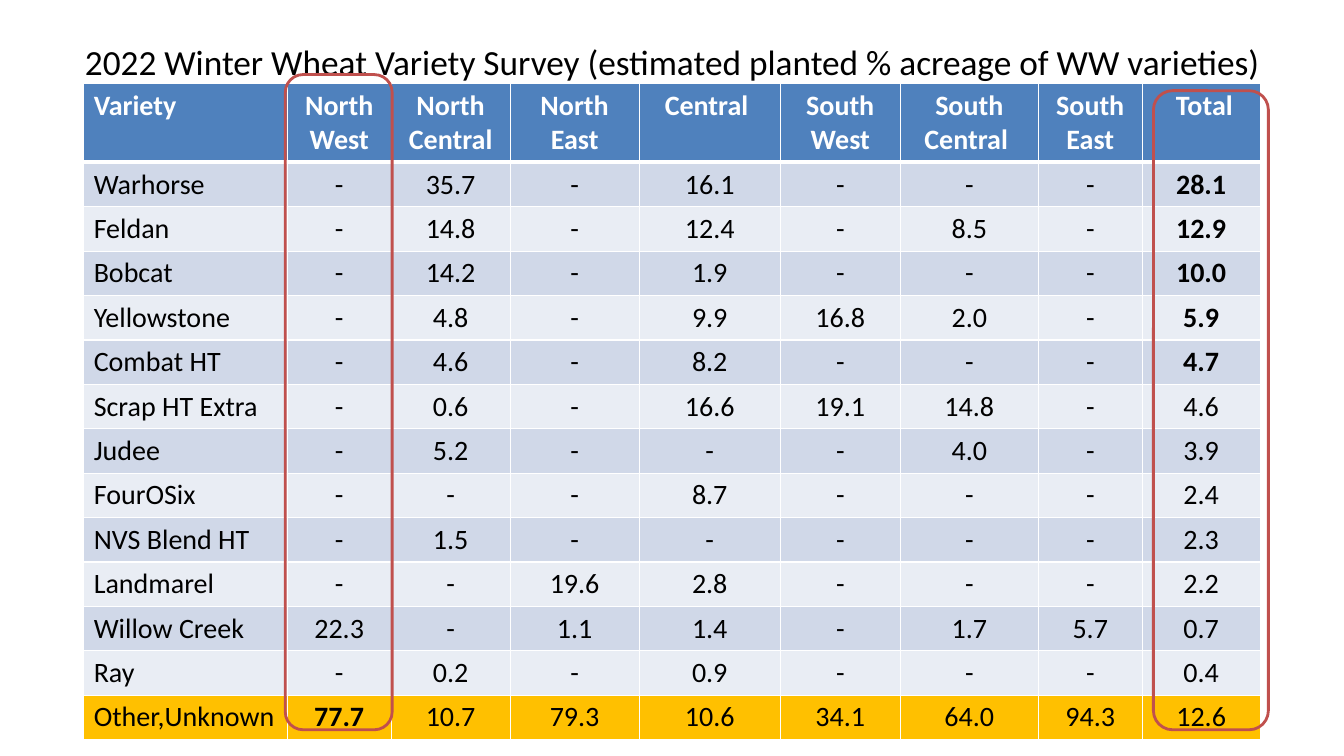
from dataclasses import dataclass

from lxml.etree import SubElement as Sub
from pptx import Presentation
from pptx.dml.color import RGBColor as RGB
from pptx.enum.shapes import MSO_SHAPE as Shape
from pptx.enum.text import MSO_ANCHOR as Anchor, MSO_AUTO_SIZE as Fit, PP_ALIGN as Align
from pptx.oxml.ns import qn
from pptx.util import Inches, Pt


@dataclass(frozen=True)
class Theme:
    font: str = "Calibri"
    title: float = 25.2
    cell: float = 20
    black: str = "000000"
    white: str = "FFFFFF"
    head: str = "4F81BD"
    odd: str = "D0D8E8"
    even: str = "E9EDF4"
    other: str = "FFC000"
    frame: str = "C0504D"


THEME = Theme()
TITLE = "2022 Winter Wheat Variety Survey (estimated planted % acreage of WW varieties)"
WIDTHS = [2.02, 1.03, 1.18, 1.28, 1.4, 1.19, 1.37, 1.03, 1.17]
HEAD_H, ROW_H = 0.65, 0.44
ROWS = [
    ["Variety", "North West", "North Central", "North East", "Central ",
     "South West", "South Central ", "South East", " Total"],
    ["Warhorse", "-", "35.7", "-", "16.1", "-", "-", "-", "28.1"],
    ["Feldan", "-", "14.8", "-", "12.4", "-", "8.5", "-", "12.9"],
    ["Bobcat", "-", "14.2", "-", "1.9", "-", "-", "-", "10.0"],
    ["Yellowstone", "-", "4.8", "-", "9.9", "16.8", "2.0", "-", "5.9"],
    ["Combat HT", "-", "4.6", "-", "8.2", "-", "-", "-", "4.7"],
    ["Scrap HT Extra", "-", "0.6", "-", "16.6", "19.1", "14.8", "-", "4.6"],
    ["Judee", "-", "5.2", "-", "-", "-", "4.0", "-", "3.9"],
    ["FourOSix", "-", "-", "-", "8.7", "-", "-", "-", "2.4"],
    ["NVS Blend HT", "-", "1.5", "-", "-", "-", "-", "-", "2.3"],
    ["Landmarel", "-", "-", "19.6", "2.8", "-", "-", "-", "2.2"],
    ["Willow Creek", "22.3", "-", "1.1", "1.4", "-", "1.7", "5.7", "0.7"],
    ["Ray", "-", "0.2", "-", "0.9", "-", "-", "-", "0.4"],
    ["Other,Unknown", "77.7", "10.7", "79.3", "10.6", "34.1", "64.0", "94.3", "12.6"],
]
LAST_ROW, LAST_COL = len(ROWS) - 1, len(WIDTHS) - 1
# The five leading totals and the largest unknown share
BOLD = {(row, LAST_COL) for row in range(1, 6)} | {(LAST_ROW, 1)}


def style(para, size, color, bold, align):
    para.alignment = align
    for run in para.runs:
        font = run.font
        font.name, font.size, font.bold = THEME.font, Pt(size), bold
        font.color.rgb = RGB.from_string(color)


def add_title(slide):
    title = slide.shapes.title
    title.left, title.top = Inches(0.67), Inches(0.23)
    title.width, title.height = Inches(12), Inches(0.75)
    frame = title.text_frame
    frame.text = TITLE
    frame.auto_size, frame.vertical_anchor = Fit.NONE, Anchor.MIDDLE
    style(frame.paragraphs[0], THEME.title, THEME.black, False, Align.CENTER)


def row_fill(row):
    if row == 0:
        return THEME.head
    if row == LAST_ROW:
        return THEME.other
    return THEME.odd if row % 2 else THEME.even


def set_edges(cell, **edges):
    # Borders come before the fill in the cell properties
    props = cell._tc.get_or_add_tcPr()
    for spot, (side, width) in enumerate(edges.items()):
        line = Sub(props, qn(f"a:ln{side}"), w=str(Pt(width)))
        Sub(Sub(line, qn("a:solidFill")), qn("a:srgbClr"), val=THEME.white)
        props.insert(spot, line)


def add_survey(slide):
    height = HEAD_H + ROW_H * LAST_ROW
    table = slide.shapes.add_table(
        len(ROWS), len(WIDTHS), Inches(0.83), Inches(0.83),
        Inches(sum(WIDTHS)), Inches(height)).table
    for column, width in zip(table.columns, WIDTHS):
        column.width = Inches(width)
    for row, values in enumerate(ROWS):
        table.rows[row].height = Inches(ROW_H if row else HEAD_H)
        for col, value in enumerate(values):
            cell = table.cell(row, col)
            cell.text_frame.text = value
            cell.fill.solid()
            cell.fill.fore_color.rgb = RGB.from_string(row_fill(row))
            set_edges(cell, L=1, R=1, T=3 if row == 1 else 1, B=1 if row else 3)
            style(cell.text_frame.paragraphs[0], THEME.cell,
                  THEME.black if row else THEME.white,
                  row == 0 or (row, col) in BOLD,
                  Align.CENTER if col else Align.LEFT)


def add_frame(slide, left, top, width, height):
    box = slide.shapes.add_shape(Shape.ROUNDED_RECTANGLE, Inches(left),
                                 Inches(top), Inches(width), Inches(height))
    box.shadow.inherit = False
    box.fill.background()
    box.line.color.rgb = RGB.from_string(THEME.frame)
    box.line.width = Pt(2)


def main():
    deck = Presentation()
    deck.slide_width, deck.slide_height = Inches(13.33), Inches(7.5)
    slide = deck.slides.add_slide(deck.slide_layouts[5])
    add_title(slide)
    add_survey(slide)
    # Outlines around the North West and Total columns
    add_frame(slide, 2.83, 0.74, 1.06, 6.5)
    add_frame(slide, 11.44, 0.9, 1.14, 6.34)
    deck.save("out.pptx")


if __name__ == "__main__":
    main()
